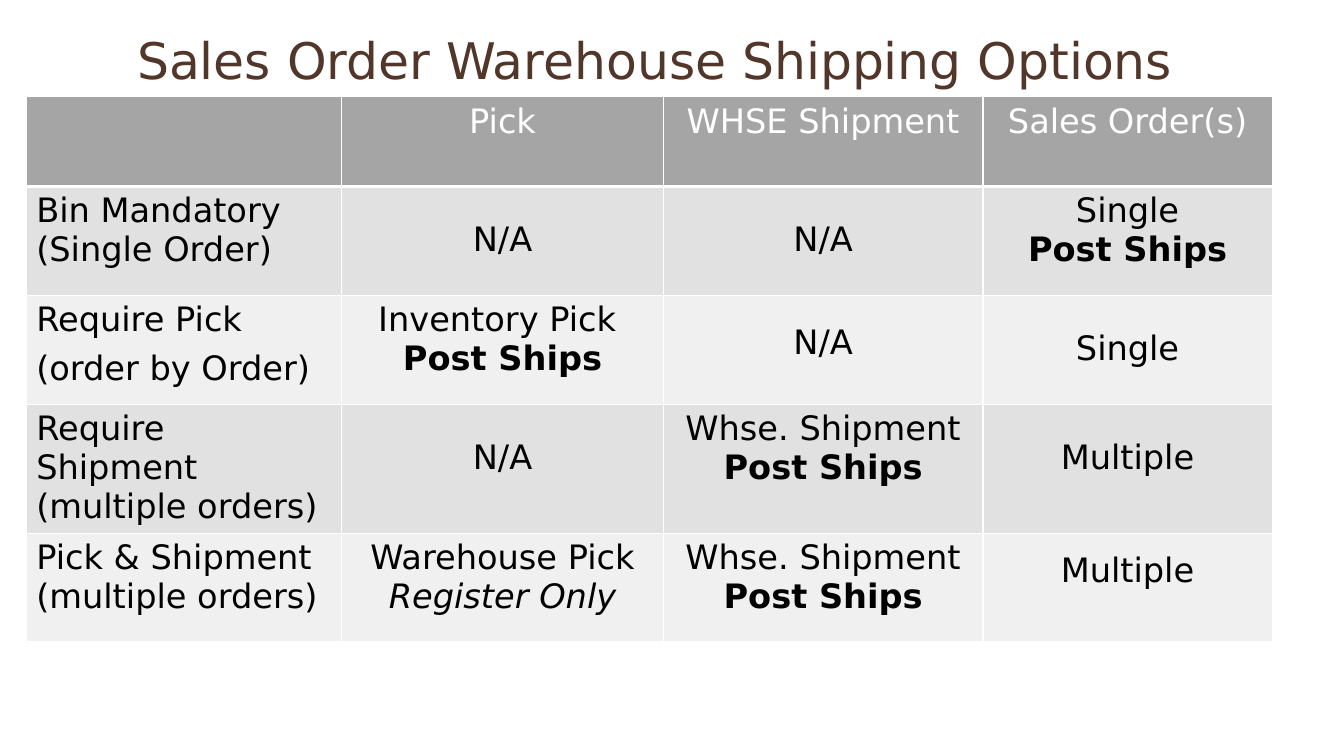
from lxml import etree
from pptx import Presentation, util as u
from pptx.dml.color import RGBColor
from pptx.enum import text as t
from pptx.oxml.ns import qn

WIDE, HIGH = u.Inches(13.33), u.Inches(7.5)
FONT = "DejaVu Sans"
HUES = {"title": "513629", "head": "A5A5A5", "odd": "E1E1E1",
        "even": "F0F0F0", "white": "FFFFFF", "black": "000000"}
LEFT, SPAN = 1.95, 92.72
COLS = [23.48, 23.93, 23.78, 21.53]
ROWS = [11.87, 14.4, 14.4, 17.07, 14.4]
LINE = 1.16  # line height of the font, in ems
SHIP = "Post Ships"
NOTE = "Register Only"
CELLS = [
    ["", "Pick", "WHSE Shipment", "Sales Order(s)"],
    ["Bin Mandatory\n(Single Order)", "N/A", "N/A", f"Single\n{SHIP}"],
    ["Require Pick\n(order by Order)", f"Inventory Pick \n{SHIP}", "N/A", "Single"],
    ["Require Shipment\n(multiple orders)", "N/A", f"Whse. Shipment\n{SHIP}", "Multiple"],
    ["Pick & Shipment\n(multiple orders)", f"Warehouse Pick\n{NOTE}",
     f"Whse. Shipment\n{SHIP}", "Multiple"],
]
# Points by which the text of a cell (row, column) is lowered
DROPS = {(1, 1): 18, (1, 2): 18, (2, 2): 14, (2, 3): 18,
         (3, 1): 18, (3, 3): 18, (4, 3): 8}


def across(share):
    """Length for a percentage of the slide's width."""
    return round(WIDE * share / 100)


def down(share):
    """Length for a percentage of the slide's height."""
    return round(HIGH * share / 100)


def style(font, size, hue):
    font.name, font.size = FONT, u.Pt(size)
    font.color.rgb = RGBColor.from_string(HUES[hue])


def add_title(slide, words):
    title = slide.shapes.title
    title.left, title.top = across(LEFT), down(2.53)
    title.width, title.height = across(SPAN), down(10.8)
    frame = title.text_frame
    frame.text = words
    frame.word_wrap = True
    frame.auto_size = t.MSO_AUTO_SIZE.NONE
    frame.vertical_anchor = t.MSO_ANCHOR.MIDDLE
    frame.margin_left, frame.margin_top = u.Inches(1.1), u.Inches(0.11)
    para = frame.paragraphs[0]
    para.alignment, para.line_spacing = t.PP_ALIGN.LEFT, 0.9
    style(para.runs[0].font, 36, "title")


def add_edges(cell, base):
    """Draw white borders; base is the width of the lower one."""
    props = cell._tc.get_or_add_tcPr()
    for side, width in zip("LRTB", (1, 1, 1, base)):
        line = etree.SubElement(props, qn(f"a:ln{side}"), w=str(u.Pt(width)))
        fill = etree.SubElement(line, qn("a:solidFill"))
        etree.SubElement(fill, qn("a:srgbClr"), val=HUES["white"])


def fill_cell(cell, row, col):
    head = row == 0
    add_edges(cell, 3 if head else 1)
    cell.fill.solid()
    tone = "head" if head else "odd" if row % 2 else "even"
    cell.fill.fore_color.rgb = RGBColor.from_string(HUES[tone])
    cell.margin_top = u.Pt(3.6 + DROPS.get((row, col), 0) * LINE)
    cell.text_frame.text = CELLS[row][col]
    for para in cell.text_frame.paragraphs:
        para.alignment = t.PP_ALIGN.CENTER if col else t.PP_ALIGN.LEFT
        style(para.font, 24, "white" if head else "black")
        for run in para.runs:
            style(run.font, 24, "white" if head else "black")
            run.font.bold = run.text == SHIP
            run.font.italic = run.text == NOTE


def add_grid(slide):
    frame = slide.shapes.add_table(len(ROWS), len(COLS), across(LEFT), down(12.8),
                                   across(SPAN), down(sum(ROWS)))
    table = frame.table
    table.first_row = table.horz_banding = False
    for col, share in zip(table.columns, COLS):
        col.width = across(share)
    for row, share in zip(table.rows, ROWS):
        row.height = down(share)
    for row in range(len(ROWS)):
        for col in range(len(COLS)):
            fill_cell(table.cell(row, col), row, col)
    table.cell(2, 0).text_frame.paragraphs[1].space_before = u.Pt(6 * LINE)


def main():
    deck = Presentation()
    deck.slide_width, deck.slide_height = WIDE, HIGH
    slide = deck.slides.add_slide(deck.slide_layouts[5])
    add_title(slide, "Sales Order Warehouse Shipping Options")
    add_grid(slide)
    deck.save("out.pptx")


if __name__ == "__main__":
    main()
